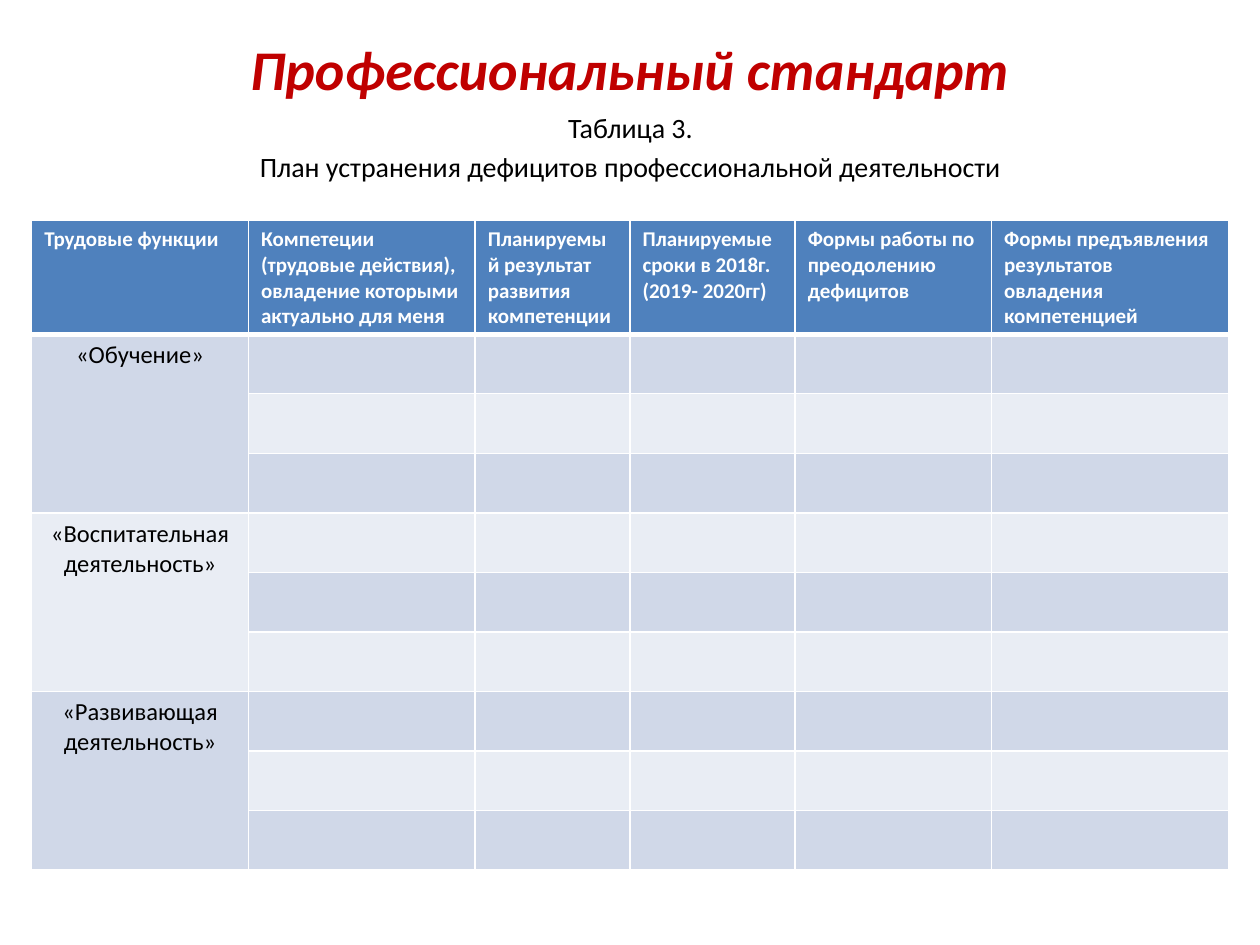
from dataclasses import dataclass

from lxml import etree
from pptx import Presentation
from pptx.dml.color import RGBColor
from pptx.enum import text
from pptx.oxml.ns import qn
from pptx.util import Cm, Pt


@dataclass(frozen=True)
class Theme:
    font: str = "Calibri"
    title: str = "C00000"
    ink: str = "000000"
    white: str = "FFFFFF"
    header: str = "4F81BD"
    bands: tuple[str, str] = ("D0D8E8", "E9EDF4")
    title_size: int = 32
    caption_size: int = 16
    header_size: int = 12
    body_size: int = 14
    rule: float = 1
    header_rule: float = 3


@dataclass(frozen=True)
class Column:
    heading: str
    width: float


@dataclass(frozen=True)
class TextBlock:
    lines: tuple[str, ...]
    left: float
    top: float
    width: float
    height: float
    anchor: text.MSO_ANCHOR
    size: int
    color: str
    emphasis: bool = False
    space_before: float = 0


THEME = Theme()
HEADER_HEIGHT, ROW_HEIGHT = 2.18, 1.2
ROWS_PER_FUNCTION = 3
COLUMNS = (
    Column("Трудовые функции", 4.37),
    Column("Компетеции (трудовые действия), овладение которыми актуально для меня", 4.57),
    Column("Планируемый результат развития компетенции", 3.12),
    Column("Планируемые сроки в 2018г. (2019- 2020гг)", 3.33),
    Column("Формы работы по преодолению дефицитов", 3.96),
    Column("Формы предъявления результатов овладения компетенцией", 4.78),
)
FUNCTIONS = ("«Обучение»", "«Воспитательная деятельность»", "«Развивающая деятельность»")
TEXT_BLOCKS = (
    TextBlock(("Профессиональный стандарт",), 1.27, 0.43, 22.86, 1.9,
              text.MSO_ANCHOR.MIDDLE, THEME.title_size, THEME.title, emphasis=True),
    TextBlock(("Таблица 3.", "План устранения дефицитов профессиональной деятельности"),
              0.43, 2.11, 24.56, 14.6, text.MSO_ANCHOR.TOP,
              THEME.caption_size, THEME.ink, space_before=3.2),
)


def style_paragraph(paragraph, size: int, color: str, bold: bool = False,
                    italic: bool = False, align=text.PP_ALIGN.CENTER) -> None:
    paragraph.alignment = align
    font = paragraph.font
    font.name, font.size, font.bold, font.italic = THEME.font, Pt(size), bold, italic
    font.color.rgb = RGBColor.from_string(color)


def add_text(slide, block: TextBlock) -> None:
    box = slide.shapes.add_textbox(Cm(block.left), Cm(block.top), Cm(block.width), Cm(block.height))
    frame = box.text_frame
    frame.word_wrap = True
    frame.vertical_anchor = block.anchor
    frame.text = "\n".join(block.lines)
    for paragraph in frame.paragraphs:
        style_paragraph(paragraph, block.size, block.color, block.emphasis, block.emphasis)
        paragraph.space_before = Pt(block.space_before)


def paint_cell(cell, fill: str, top: float, bottom: float) -> None:
    """Give a cell white borders and a solid fill; the borders must come first in the XML."""
    properties = cell._tc.get_or_add_tcPr()
    for side, width in (("L", THEME.rule), ("R", THEME.rule), ("T", top), ("B", bottom)):
        line = etree.SubElement(properties, qn(f"a:ln{side}"), w=str(Pt(width)))
        solid = etree.SubElement(line, qn("a:solidFill"))
        etree.SubElement(solid, qn("a:srgbClr"), val=THEME.white)
    cell.fill.solid()
    cell.fill.fore_color.rgb = RGBColor.from_string(fill)


def add_plan(slide) -> None:
    row_count = len(FUNCTIONS) * ROWS_PER_FUNCTION
    width = sum(column.width for column in COLUMNS)
    plan = slide.shapes.add_table(
        row_count + 1, len(COLUMNS), Cm(0.64), Cm(4.45),
        Cm(width), Cm(HEADER_HEIGHT + row_count * ROW_HEIGHT)).table

    for row_index, row in enumerate(plan.rows):
        is_header = row_index == 0
        row.height = Cm(HEADER_HEIGHT if is_header else ROW_HEIGHT)
        fill = THEME.header if is_header else THEME.bands[(row_index - 1) % 2]
        top = THEME.header_rule if row_index == 1 else THEME.rule
        bottom = THEME.header_rule if is_header else THEME.rule
        for cell in row.cells:
            paint_cell(cell, fill, top, bottom)

    for index, column in enumerate(COLUMNS):
        plan.columns[index].width = Cm(column.width)
        heading = plan.cell(0, index)
        heading.text = column.heading
        style_paragraph(heading.text_frame.paragraphs[0], THEME.header_size, THEME.white,
                        bold=True, align=text.PP_ALIGN.LEFT)

    for index, function in enumerate(FUNCTIONS):
        first_row = 1 + index * ROWS_PER_FUNCTION
        label = plan.cell(first_row, 0)
        label.merge(plan.cell(first_row + ROWS_PER_FUNCTION - 1, 0))
        label.text = function
        style_paragraph(label.text_frame.paragraphs[0], THEME.body_size, THEME.ink)


def main() -> None:
    presentation = Presentation()
    presentation.slide_width, presentation.slide_height = Cm(25.4), Cm(19.05)
    slide = presentation.slides.add_slide(presentation.slide_layouts[6])
    for block in TEXT_BLOCKS:
        add_text(slide, block)
    add_plan(slide)
    presentation.save("out.pptx")


if __name__ == "__main__":
    main()
